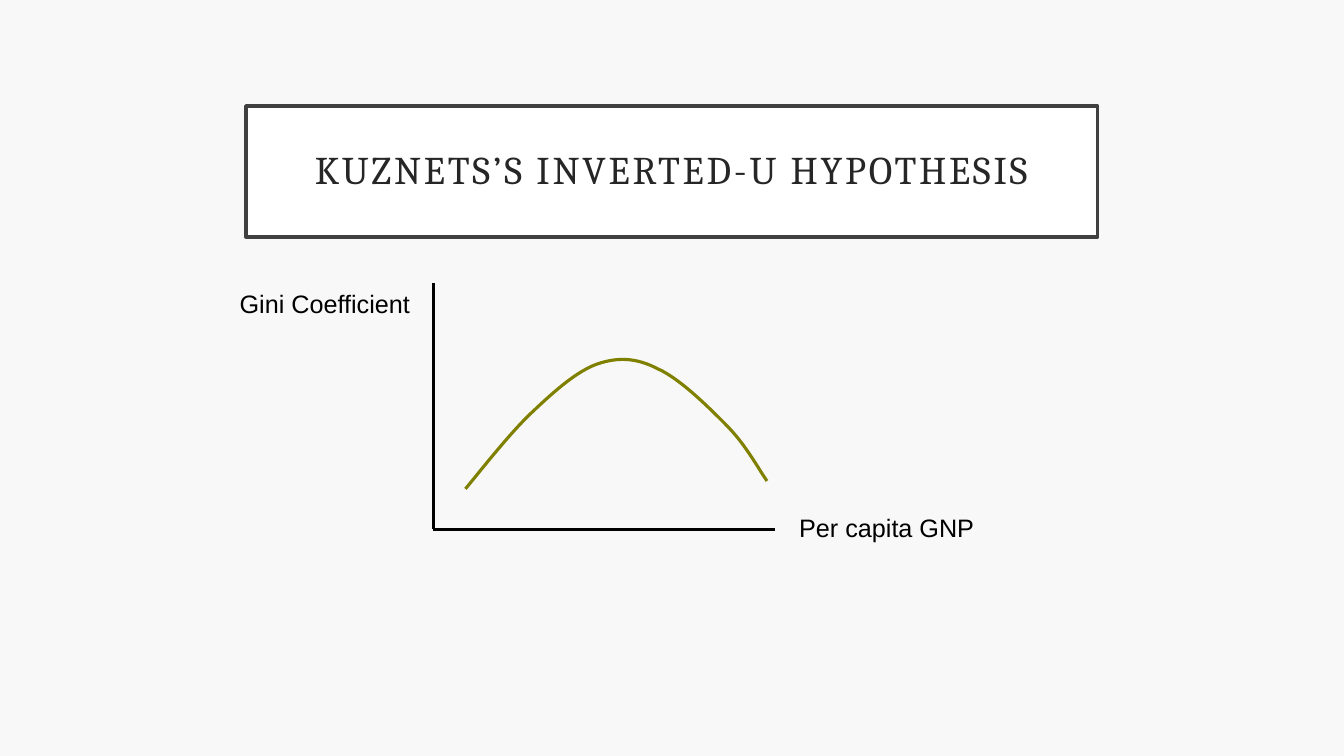
from typing import NamedTuple

from pptx import Presentation
from pptx import util as u
from pptx.dml.color import RGBColor
from pptx.enum import shapes, text
from pptx.oxml.ns import qn

Point = tuple[float, float]


class Axis(NamedTuple):
    start: Point
    end: Point


class Label(NamedTuple):
    wording: str
    left: float
    top: float
    width: float


# Content, lengths in centimetres
ORIGIN: Point = (10.92, 13.34)
AXES = [Axis((10.92, 7.14), ORIGIN), Axis(ORIGIN, (19.53, 13.34))]
LABELS = [
    Label("Per capita GNP", 19.89, 12.78, 4.98),
    Label("Gini Coefficient", 5.79, 7.14, 4.83),
]
# Start point, then two control points and an end point per segment
KUZNETS_CURVE: list[Point] = [
    (11.73, 12.32),
    (12.01, 11.99), (12.88, 10.87), (13.44, 10.36),
    (14.00, 9.83), (14.55, 9.35), (15.06, 9.17),
    (15.60, 8.99), (16.05, 9.02), (16.59, 9.30),
    (17.15, 9.55), (17.91, 10.31), (18.36, 10.77),
    (18.82, 11.25), (19.13, 11.84), (19.33, 12.12),
]
STEPS = 16


def paint(color_format, color: str) -> None:
    color_format.rgb = RGBColor.from_string(color)


def fill(target, color: str) -> None:
    target.solid()
    paint(target.fore_color, color)


def outline(line, color: str, width: float) -> None:
    fill(line.fill, color)
    line.width = u.Pt(width)


def write(frame, wording: str, *, font: str, size: float, color: str,
          align=text.PP_ALIGN.LEFT, line_spacing: float = 1.0,
          letter_spacing: float = 0) -> None:
    paragraph = frame.paragraphs[0]
    paragraph.alignment = align
    paragraph.line_spacing = line_spacing
    run = paragraph.add_run()
    run.text = wording
    run.font.name = font
    run.font.size = u.Pt(size)
    paint(run.font.color, color)
    if letter_spacing:
        run.font._element.set("spc", str(round(letter_spacing * 100)))


def draw_axis(slide, axis: Axis) -> None:
    ends = [u.Cm(value) for value in (*axis.start, *axis.end)]
    connector = slide.shapes.add_connector(shapes.MSO_CONNECTOR.STRAIGHT, *ends)
    outline(connector.line, "000000", 2)
    properties = connector._element.spPr
    properties.append(properties.makeelement(qn("a:effectLst"), {}))


def draw_label(slide, label: Label) -> None:
    box = slide.shapes.add_textbox(
        u.Cm(label.left), u.Cm(label.top), u.Cm(label.width), u.Cm(1.02))
    box.text_frame.word_wrap = False
    box.text_frame.auto_size = text.MSO_AUTO_SIZE.SHAPE_TO_FIT_TEXT
    write(box.text_frame, label.wording, font="Arial", size=18, color="000000")


def bezier(corners: list[Point], t: float) -> Point:
    weights = ((1 - t) ** 3, 3 * t * (1 - t) ** 2, 3 * t * t * (1 - t), t ** 3)
    x, y = (sum(w * c[i] for w, c in zip(weights, corners)) for i in (0, 1))
    return u.Cm(x), u.Cm(y)


def draw_curve(slide, knots: list[Point]) -> None:
    trace = [bezier(knots[first:first + 4], step / STEPS)
             for first in range(0, len(knots) - 1, 3)
             for step in range(1, STEPS + 1)]
    builder = slide.shapes.build_freeform(*(u.Cm(value) for value in knots[0]))
    builder.add_line_segments(trace, close=False)
    curve = builder.convert_to_shape()
    curve.shadow.inherit = False
    curve.fill.background()
    outline(curve.line, "808000", 2.25)


def draw_title(slide) -> None:
    title = slide.shapes.title
    title.left, title.top = u.Cm(6.2), u.Cm(2.67)
    title.width, title.height = u.Cm(21.46), u.Cm(3.3)
    fill(title.fill, "FFFFFF")
    outline(title.line, "404040", 2.5)
    frame = title.text_frame
    frame.word_wrap = True
    frame.auto_size = text.MSO_AUTO_SIZE.NONE
    frame.vertical_anchor = text.MSO_ANCHOR.MIDDLE
    frame.margin_left = frame.margin_right = u.Cm(0.51)
    frame.margin_top = frame.margin_bottom = u.Cm(0.51)
    write(frame, "KUZNETS’S INVERTED-U HYPOTHESIS", font="Cambria", size=28,
          color="262626", align=text.PP_ALIGN.CENTER, line_spacing=0.9,
          letter_spacing=2)


def main() -> None:
    deck = Presentation()
    deck.slide_width, deck.slide_height = u.Cm(33.87), u.Cm(19.05)
    slide = deck.slides.add_slide(deck.slide_layouts.get_by_name("Title Only"))
    fill(slide.background.fill, "F8F8F8")

    draw_title(slide)

    # Diagram: axes, inverted U, axis names
    for axis in AXES:
        draw_axis(slide, axis)
    draw_curve(slide, KUZNETS_CURVE)
    for label in LABELS:
        draw_label(slide, label)

    deck.save("out.pptx")


if __name__ == "__main__":
    main()
